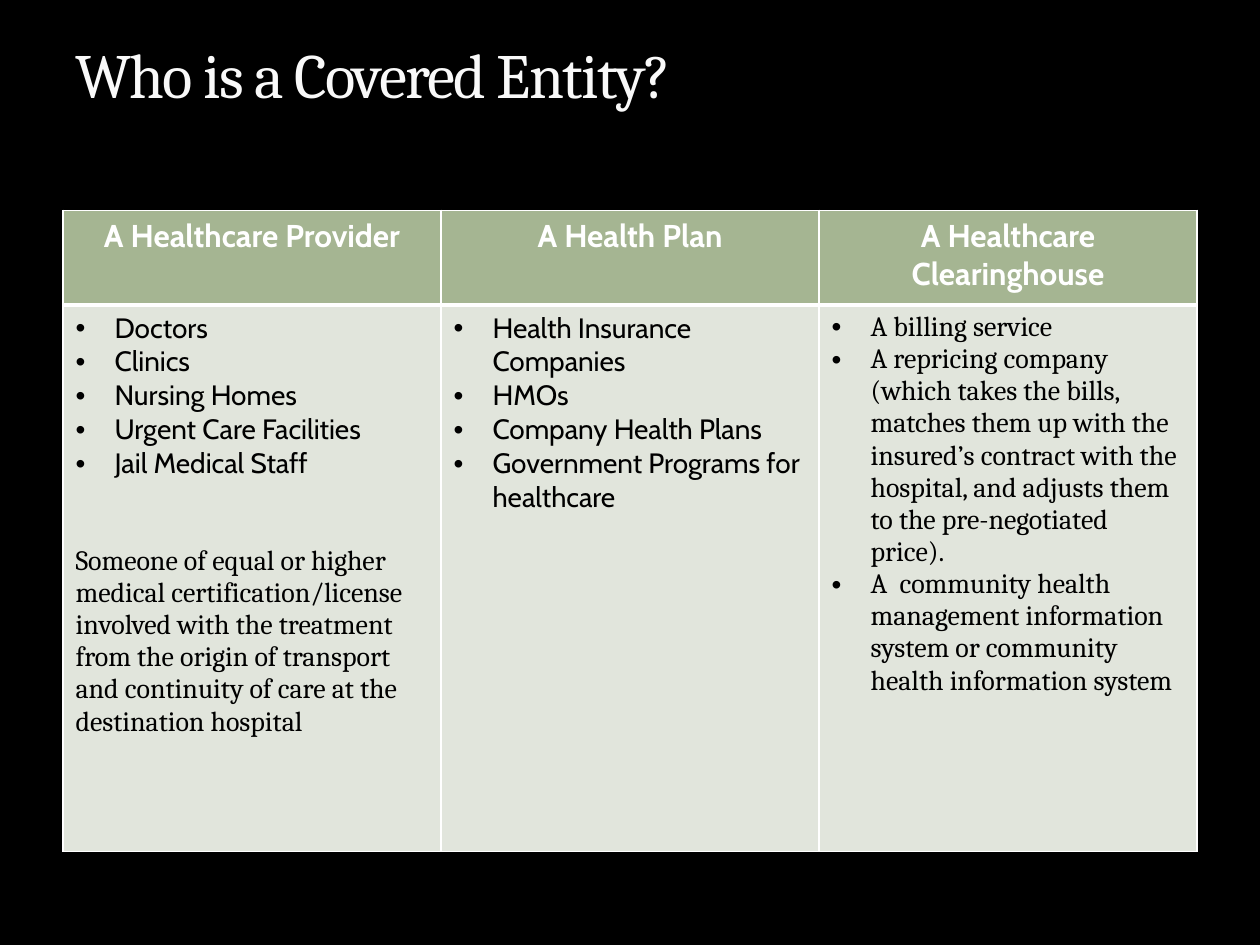
from dataclasses import dataclass

from lxml import etree
from pptx import Presentation
from pptx.dml.color import RGBColor
from pptx.enum import text
from pptx.oxml import ns
from pptx.util import Inches, Pt

BLACK = RGBColor(0x00, 0x00, 0x00)
WHITE = RGBColor(0xFF, 0xFF, 0xFF)
OFF_WHITE = RGBColor(0xF9, 0xF9, 0xF9)
SAGE = RGBColor(0xA5, 0xB5, 0x92)
PALE_SAGE = RGBColor(0xE1, 0xE5, 0xDC)
SANS, SERIF = "Cabin", "Cambria"
BULLET_INDENT = Inches(0.31)
THIN, THICK = Pt(1), Pt(3)


@dataclass(frozen=True)
class Entity:
    heading: str
    bullets: tuple[str, ...]
    font: str = SANS
    note: str = ""


ENTITIES = (
    Entity(
        "A Healthcare Provider",
        ("Doctors", "Clinics", "Nursing Homes", "Urgent Care Facilities",
         "Jail Medical Staff"),
        note="Someone of equal or higher medical certification/license involved "
             "with the treatment from the origin of transport and continuity of "
             "care at the destination hospital",
    ),
    Entity(
        "A Health Plan",
        ("Health Insurance Companies", "HMOs", "Company Health Plans",
         "Government Programs for healthcare"),
    ),
    Entity(
        "A Healthcare Clearinghouse",
        ("A billing service",
         "A repricing company (which takes the bills, matches them up with the "
         "insured’s contract with the hospital, and adjusts them to the "
         "pre-negotiated price).",
         "A  community health management information system or community "
         "health information system"),
        font=SERIF,
    ),
)


def style(p, font: str, size: int, color: RGBColor, bold: bool = False) -> None:
    for r in p.runs:
        r.font.name, r.font.size, r.font.bold = font, Pt(size), bold
        r.font.color.rgb = color


def add_bullet(p) -> None:
    pPr = p._p.get_or_add_pPr()
    pPr.set("marL", str(BULLET_INDENT))
    pPr.set("indent", str(-BULLET_INDENT))
    etree.SubElement(pPr, ns.qn("a:buFont"), typeface="Arial")
    etree.SubElement(pPr, ns.qn("a:buChar"), char="•")


def format_cell(cell, fill: RGBColor, top: int, bottom: int) -> None:
    """Fill the cell and give it white borders, which must precede the fill."""
    tcPr = cell._tc.get_or_add_tcPr()
    for side, width in (("L", THIN), ("R", THIN), ("T", top), ("B", bottom)):
        ln = etree.SubElement(tcPr, ns.qn(f"a:ln{side}"), w=str(width))
        solid = etree.SubElement(ln, ns.qn("a:solidFill"))
        etree.SubElement(solid, ns.qn("a:srgbClr"), val=str(WHITE))
    cell.fill.solid()
    cell.fill.fore_color.rgb = fill


def fill_column(table, col: int, entity: Entity) -> None:
    head, body = table.cell(0, col), table.cell(1, col)
    format_cell(head, SAGE, THIN, THICK)
    format_cell(body, PALE_SAGE, THICK, THIN)

    head.text_frame.text = entity.heading
    p = head.text_frame.paragraphs[0]
    p.alignment = text.PP_ALIGN.CENTER
    style(p, SANS, 18, WHITE, bold=True)

    tf = body.text_frame
    tf.text = "\n".join(entity.bullets)
    for p in tf.paragraphs:
        add_bullet(p)
        style(p, entity.font, 16, BLACK)
    if entity.note:
        p = tf.add_paragraph()
        p.text = entity.note
        p.space_before = Pt(37)
        style(p, SERIF, 16, BLACK)


def add_title(s, title: str) -> None:
    tf = s.shapes.add_textbox(Inches(0.5), Inches(0.17), Inches(9), Inches(1.33)).text_frame
    tf.word_wrap = True
    tf.vertical_anchor = text.MSO_ANCHOR.TOP
    tf.margin_top = Inches(0.11)
    tf.text = title
    p = tf.paragraphs[0]
    style(p, SERIF, 36, OFF_WHITE)
    p.runs[0].font._element.set("spc", "-100")


def main() -> None:
    prs = Presentation()
    prs.slide_width, prs.slide_height = Inches(10), Inches(7.5)
    s = prs.slides.add_slide(prs.slide_layouts[6])
    s.background.fill.solid()
    s.background.fill.fore_color.rgb = BLACK

    table = s.shapes.add_table(2, len(ENTITIES), Inches(0.5), Inches(1.67),
                               Inches(9), Inches(5.09)).table
    table.rows[0].height, table.rows[1].height = Inches(0.75), Inches(4.34)
    for col, entity in enumerate(ENTITIES):
        fill_column(table, col, entity)
    add_title(s, "Who is a Covered Entity?")
    prs.save("out.pptx")


if __name__ == "__main__":
    main()
